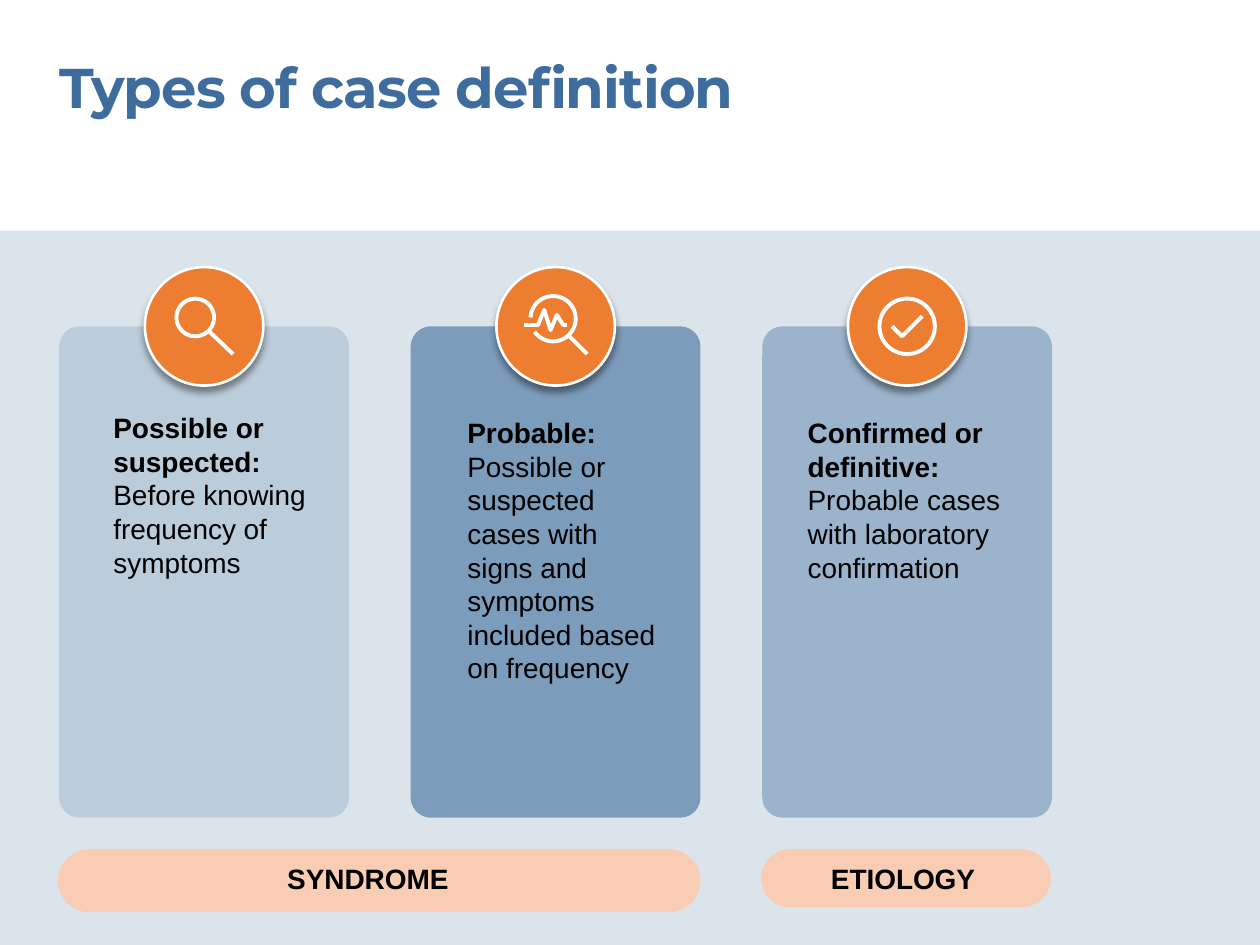
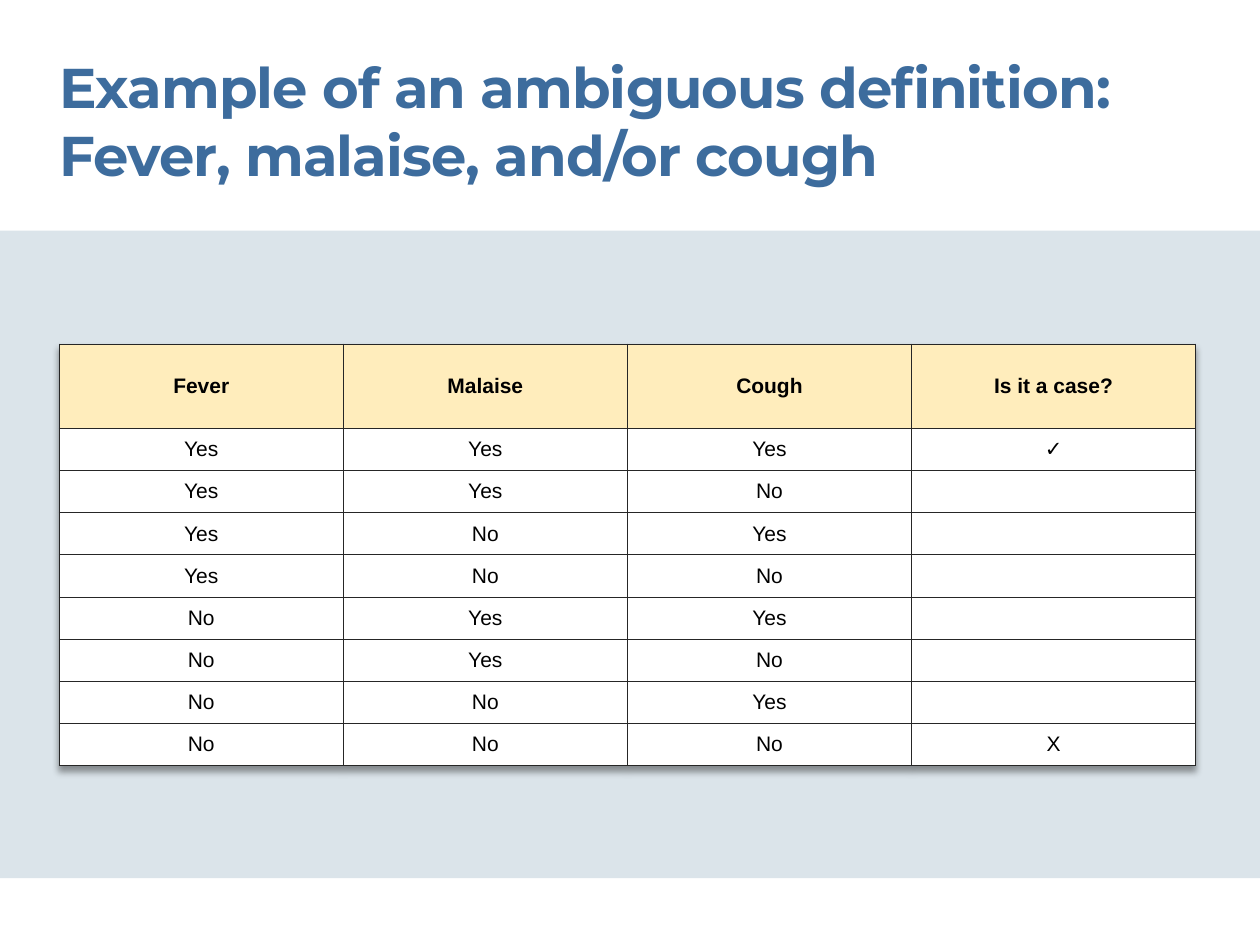
from itertools import product

from lxml import etree
from pptx import Presentation
from pptx.dml.color import RGBColor
from pptx.enum.shapes import MSO_CONNECTOR, MSO_SHAPE
from pptx.enum.text import MSO_ANCHOR, MSO_AUTO_SIZE, PP_ALIGN
from pptx.oxml.ns import qn
from pptx.util import Inches, Pt

COLORS = {
    "title": "3D6C9D", "band": "DBE4EA", "card": "3D6C9D", "badge": "ED7D31",
    "pill": "F8CDB4", "header": "FFEDBC", "border": "262626",
    "white": "FFFFFF", "black": "000000",
}
TITLE_FONT, BODY_FONT = "Montserrat", "Arial"
MARGIN = 0.47
ICON_WEIGHT = 2.25

CARD_TOP, CARD_W, CARD_H, CARD_PITCH = 2.59, 2.3, 3.9, 2.79
BADGE = 0.94
# opacity, text offset x, y and width, paragraphs of (text, bold) runs
CARDS = [
    (20, 0.43, 0.67, 1.58, [[("Possible or suspected: ", True),
                             ("Before knowing frequency of symptoms", False)]]),
    (60, 0.45, 0.71, 1.57, [[("Probable:", True)],
                            [("Possible or suspected cases with signs and "
                              "symptoms included based on frequency", False)]]),
    (40, 0.36, 0.71, 1.68, [[("Confirmed or definitive: ", True),
                             ("Probable cases with laboratory confirmation", False)]]),
]
# label, left, width, height, text offset
PILLS = [("SYNDROME", 0.46, 5.1, 0.5, 1.52), ("ETIOLOGY", 6.04, 2.3, 0.46, 0.12)]

HEADERS = ["Fever", "Malaise", "Cough", "Is it a case?"]
VERDICTS = {("Yes", "Yes", "Yes"): "✓", ("No", "No", "No"): "X"}


def color(name):
    return RGBColor.from_string(COLORS[name])


def add_xml(parent, tag, **attrs):
    return etree.SubElement(parent, qn(tag), attrs)


def add_shadow(parent):
    effects = parent.find(qn("a:effectLst"))
    if effects is None:
        effects = add_xml(parent, "a:effectLst")
    shadow = add_xml(effects, "a:outerShdw", blurRad=str(Pt(4)), dist=str(Pt(3)),
                     dir="5400000", algn="t", rotWithShape="0")
    black = add_xml(shadow, "a:srgbClr", val=COLORS["black"])
    add_xml(black, "a:alpha", val="40000")


def add_box(s, kind, x, y, w, h, fill, opacity=100):
    sp = s.shapes.add_shape(kind, Inches(x), Inches(y), Inches(w), Inches(h))
    sp.shadow.inherit = False
    sp.line.fill.background()
    sp.fill.solid()
    sp.fill.fore_color.rgb = color(fill)
    if opacity < 100:
        rgb = sp.fill._xPr.find(qn("a:solidFill"))[0]
        add_xml(rgb, "a:alpha", val=str(opacity * 1000))
    return sp


def style_run(r, size, font, fill, bold):
    r.font.size, r.font.name, r.font.bold = Pt(size), font, bold
    r.font.color.rgb = color(fill)


def add_text(s, x, y, w, h, paragraphs, size=16, font=BODY_FONT, fill="black",
             align=PP_ALIGN.LEFT):
    """Add a box without insets; each paragraph is a list of (text, bold) runs."""
    tf = s.shapes.add_textbox(Inches(x), Inches(y), Inches(w), Inches(h)).text_frame
    tf.word_wrap = True
    tf.auto_size = MSO_AUTO_SIZE.SHAPE_TO_FIT_TEXT
    tf.margin_left = tf.margin_right = tf.margin_top = tf.margin_bottom = 0
    for i, runs in enumerate(paragraphs):
        p = tf.add_paragraph() if i else tf.paragraphs[0]
        p.alignment = align
        for text, bold in runs:
            r = p.add_run()
            r.text = text
            style_run(r, size, font, fill, bold)
    return tf


def add_titled_slide(prs, lines, title_w, band_h):
    s = prs.slides.add_slide(prs.slide_layouts[6])
    add_box(s, MSO_SHAPE.RECTANGLE, 0, 1.83, 10, band_h, "band")
    tf = add_text(s, MARGIN, 0.42, title_w, 0.54 * len(lines),
                  [[(line, True)] for line in lines], 32, TITLE_FONT, "title")
    for p in tf.paragraphs:
        for r in p.runs:
            r.font._element.set("spc", "-50")
    return s


def style_stroke(sp):
    sp.line.color.rgb = color("white")
    sp.line.width = Pt(ICON_WEIGHT)


def add_ring(s, cx, cy, radius, arc=None):
    """Stroke a circle, or the clockwise arc between two angles in degrees."""
    kind = MSO_SHAPE.ARC if arc else MSO_SHAPE.OVAL
    sp = s.shapes.add_shape(kind, Inches(cx - radius), Inches(cy - radius),
                            Inches(2 * radius), Inches(2 * radius))
    sp.shadow.inherit = False
    sp.fill.background()
    style_stroke(sp)
    for i, angle in enumerate(arc or ()):
        sp.adjustments[i] = angle * 0.6


def add_polyline(s, x, y, points):
    (x0, y0), *rest = [(Inches(x + dx), Inches(y + dy)) for dx, dy in points]
    builder = s.shapes.build_freeform(x0, y0)
    builder.add_line_segments(rest, close=False)
    sp = builder.convert_to_shape()
    sp.shadow.inherit = False
    sp.fill.background()
    style_stroke(sp)


def add_handle(s, x1, y1, x2, y2):
    line = s.shapes.add_connector(MSO_CONNECTOR.STRAIGHT, Inches(x1), Inches(y1),
                                  Inches(x2), Inches(y2))
    style_stroke(line)
    add_xml(line._element.spPr, "a:effectLst")


def add_search_icon(s, x, y):
    add_ring(s, x + 0.4, y + 0.4, 0.15)
    add_handle(s, x + 0.51, y + 0.51, x + 0.7, y + 0.69)


def add_pulse_icon(s, x, y):
    add_ring(s, x + 0.45, y + 0.41, 0.18, arc=(183, 145))
    add_handle(s, x + 0.58, y + 0.55, x + 0.72, y + 0.69)
    add_polyline(s, x, y, [(0.22, 0.46), (0.33, 0.46), (0.38, 0.34), (0.43, 0.5),
                           (0.48, 0.38), (0.53, 0.46), (0.56, 0.46)])


def add_check_icon(s, x, y):
    add_ring(s, x + 0.47, y + 0.47, 0.22)
    add_polyline(s, x, y, [(0.35, 0.47), (0.43, 0.55), (0.59, 0.39)])


def add_card(s, x, y, card, add_icon):
    opacity, dx, dy, text_w, paragraphs = card
    sp = add_box(s, MSO_SHAPE.ROUNDED_RECTANGLE, x, y, CARD_W, CARD_H, "card", opacity)
    sp.adjustments[0] = 0.07
    bx, by = x + (CARD_W - BADGE) / 2, y - BADGE / 2
    badge = add_box(s, MSO_SHAPE.OVAL, bx, by, BADGE, BADGE, "badge")
    badge.line.color.rgb = color("white")
    badge.line.width = Pt(1.5)
    add_shadow(badge._element.spPr)
    add_icon(s, bx, by)
    add_text(s, x + dx, y + dy, text_w, 1.35, paragraphs)


def add_pill(s, y, label, x, w, h, dx):
    sp = add_box(s, MSO_SHAPE.ROUNDED_RECTANGLE, x, y, w, h, "pill")
    sp.adjustments[0] = 0.5
    add_text(s, x + dx, y + 0.1, 1.58, 0.27, [[(label, True)]], align=PP_ALIGN.RIGHT)


def build_types_slide(prs):
    s = add_titled_slide(prs, ["Types of case definition"], 8.1, 5.67)
    icons = [add_search_icon, add_pulse_icon, add_check_icon]
    for i, (card, add_icon) in enumerate(zip(CARDS, icons)):
        add_card(s, MARGIN + i * CARD_PITCH, CARD_TOP, card, add_icon)
    for pill in PILLS:
        add_pill(s, 6.74, *pill)


def style_cell(cell, text, is_header):
    cell.text = text
    cell.vertical_anchor = MSO_ANCHOR.MIDDLE
    cell.margin_left = cell.margin_right = Inches(0.08)
    cell.margin_top = cell.margin_bottom = Inches(0.05)
    p = cell.text_frame.paragraphs[0]
    p.alignment = PP_ALIGN.CENTER
    for r in p.runs:
        style_run(r, 12, BODY_FONT, "black", is_header)
    if not text:
        add_xml(p._p, "a:endParaRPr", sz="1200")
    tc_pr = cell._tc.get_or_add_tcPr()
    for side in ("lnL", "lnR", "lnT", "lnB"):
        ln = add_xml(tc_pr, f"a:{side}", w=str(Pt(0.5)))
        add_xml(add_xml(ln, "a:solidFill"), "a:srgbClr", val=COLORS["border"])
    cell.fill.solid()
    cell.fill.fore_color.rgb = color("header" if is_header else "white")


def add_case_table(s, x, y, w, h):
    answers = product(("Yes", "No"), repeat=3)
    rows = [HEADERS] + [[*a, VERDICTS.get(a, "")] for a in answers]
    table = s.shapes.add_table(len(rows), len(HEADERS), Inches(x), Inches(y),
                               Inches(w), Inches(h)).table
    table.horz_banding = False
    tbl_pr = table._tbl.tblPr
    add_shadow(tbl_pr)
    tbl_pr.insert(0, tbl_pr[-1])
    unit = h / (len(rows) + 1)
    for column in table.columns:
        column.width = Inches(w / len(HEADERS))
    for i, values in enumerate(rows):
        table.rows[i].height = Inches(unit if i else 2 * unit)
        for j, text in enumerate(values):
            style_cell(table.cell(i, j), text, i == 0)


def build_example_slide(prs):
    lines = ["Example of an ambiguous definition:", "Fever, malaise, and/or cough"]
    s = add_titled_slide(prs, lines, 9.02, 5.14)
    add_case_table(s, MARGIN, 2.73, 9.02, 3.35)


def main():
    prs = Presentation()
    prs.slide_width, prs.slide_height = Inches(10), Inches(7.5)
    build_types_slide(prs)
    build_example_slide(prs)
    prs.save("out.pptx")


if __name__ == "__main__":
    main()
